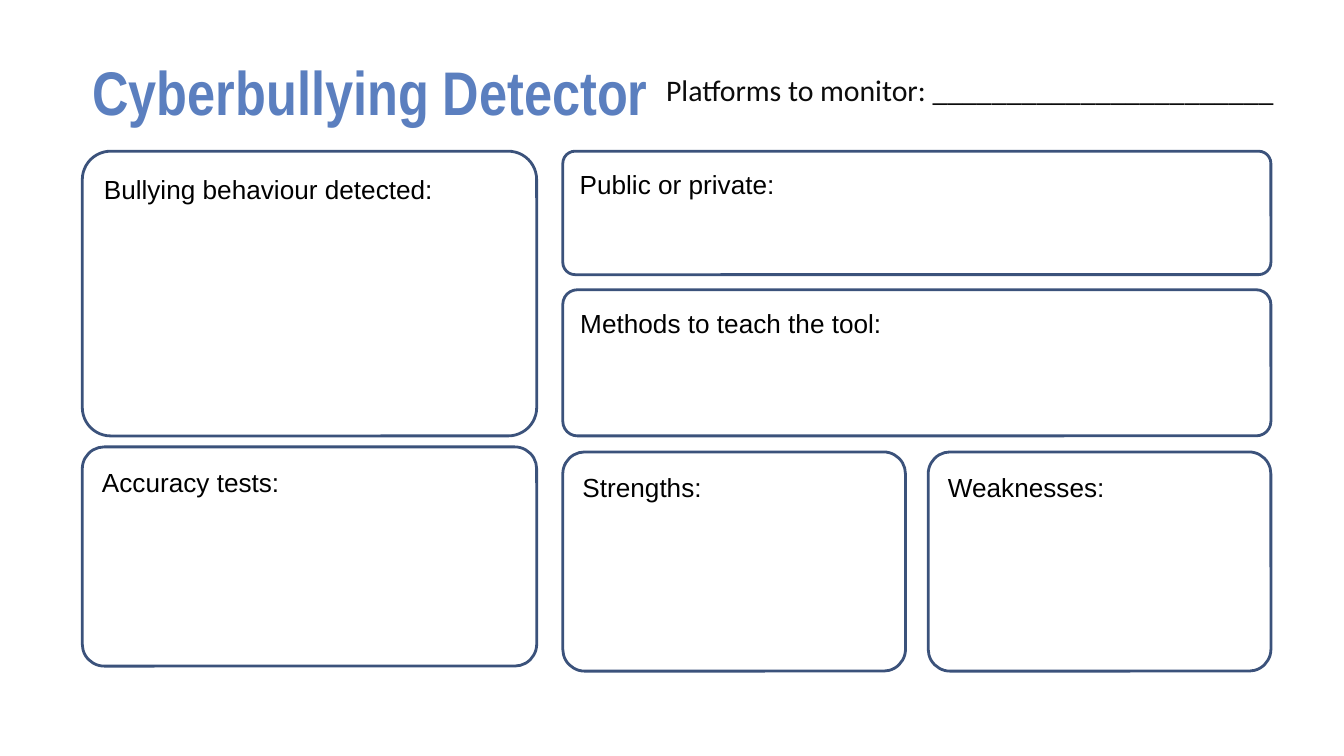
from pptx import Presentation
from pptx.dml.color import RGBColor
from pptx.enum.shapes import MSO_SHAPE
from pptx.enum.text import MSO_ANCHOR, PP_ALIGN
from pptx.util import Pt

ROUNDED = MSO_SHAPE.ROUNDED_RECTANGLE
TOP, MIDDLE = MSO_ANCHOR.TOP, MSO_ANCHOR.MIDDLE
LEFT = PP_ALIGN.LEFT
PX = 5715

THEME = {
    "title": RGBColor.from_string("5B7FBF"),
    "platforms": RGBColor.from_string("0C0C0C"),
    "label": RGBColor.from_string("000000"),
    "outline": RGBColor.from_string("3B527B"),
    "title_size": 33,
    "platforms_size": 16,
    "label_size": 14,
    "outline_width": 1.5,
}


def write(holder, text, *, font, size, color, bold=False, anchor=TOP,
          inset=(16, 16), spacing=1.0):
    frame = holder.text_frame
    frame.word_wrap = True
    frame.vertical_anchor = anchor
    frame.margin_left = frame.margin_right = inset[0] * PX
    frame.margin_top = frame.margin_bottom = inset[1] * PX
    paragraph = frame.paragraphs[0]
    paragraph.alignment = LEFT
    paragraph.line_spacing = spacing
    run = paragraph.add_run()
    run.text = text
    run.font.name = font
    run.font.size = Pt(size)
    run.font.bold = bold
    run.font.color.rgb = color


prs = Presentation()
prs.slide_width = 1600 * PX
prs.slide_height = 900 * PX
slide = prs.slides.add_slide(prs.slide_layouts[6])

title = slide.shapes.add_textbox(98 * PX, 60 * PX, 1403 * PX, 107 * PX)
write(title, "Cyberbullying Detector", font="Arial Narrow",
      size=THEME["title_size"], color=THEME["title"], bold=True,
      anchor=MIDDLE, inset=(12, 6), spacing=0.9)

platforms = slide.shapes.add_textbox(781 * PX, 84 * PX, 776 * PX, 77 * PX)
write(platforms, "Platforms to monitor: _______________________",
      font="Calibri", size=THEME["platforms_size"],
      color=THEME["platforms"], inset=(12, 6), spacing=0.9)

panels = [
    ("Bullying behaviour detected:", 98, 180, 541, 339),
    ("Public or private:", 670, 180, 843, 147),
    ("Methods to teach the tool:", 670, 345, 843, 174),
    ("Accuracy tests:", 98, 532, 541, 261),
    ("Strengths:", 670, 538, 408, 261),
    ("Weaknesses:", 1105, 538, 408, 261),
]
for label, left, top, width, height in panels:
    panel = slide.shapes.add_shape(
        ROUNDED, left * PX, top * PX, width * PX, height * PX)
    panel.adjustments[0] = 0.1
    panel.shadow.inherit = False
    panel.fill.background()
    panel.line.color.rgb = THEME["outline"]
    panel.line.width = Pt(THEME["outline_width"])
    write(panel, label, font="Arial", size=THEME["label_size"],
          color=THEME["label"])

prs.save("out.pptx")
